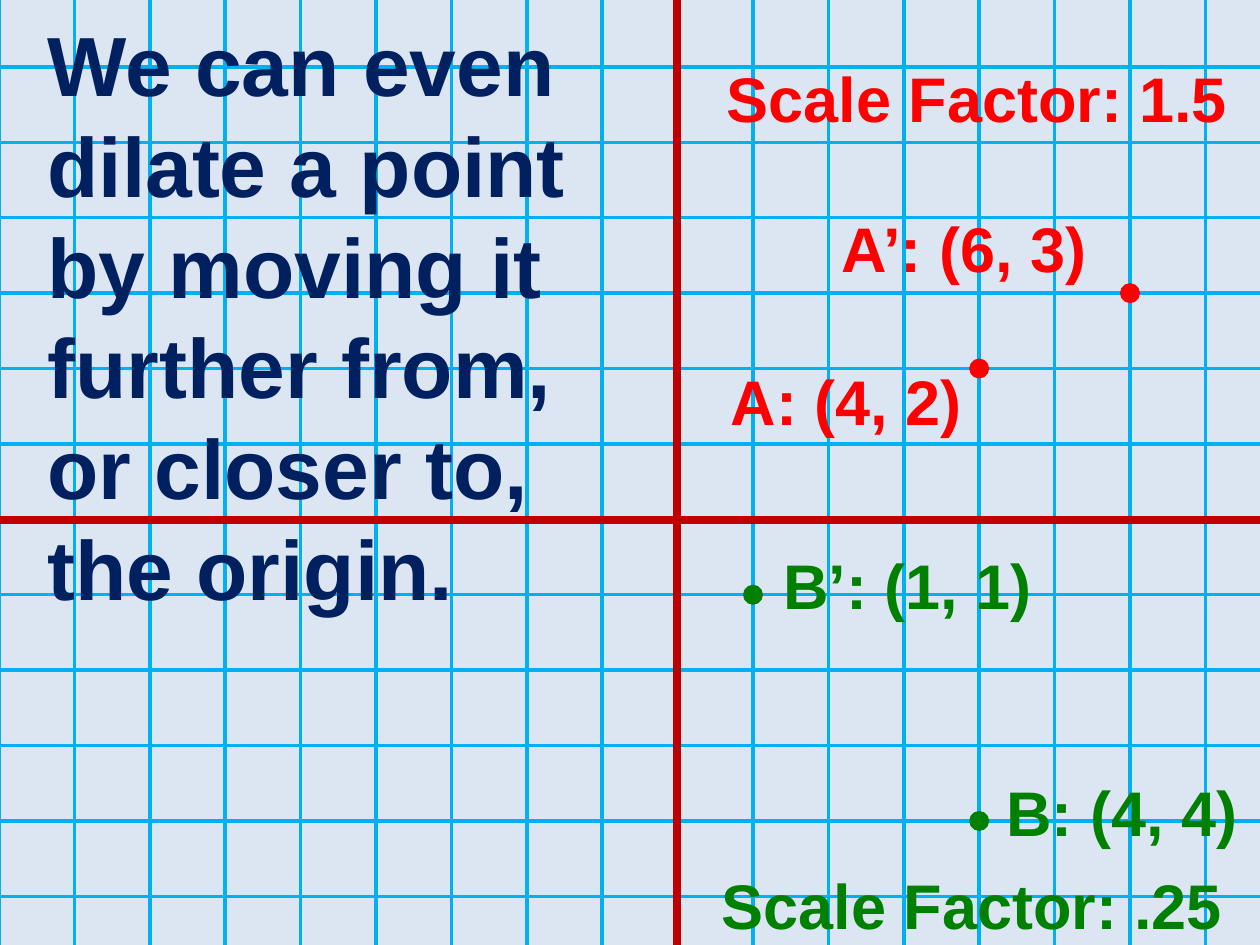
from pptx import Presentation
from pptx.dml.color import RGBColor
from pptx.enum.shapes import MSO_CONNECTOR, MSO_SHAPE
from pptx.oxml.ns import qn
from pptx.util import Cm, Pt

COLOURS = {
    "paper": "DCE6F2",
    "grid": "00B0F0",
    "axis": "C00000",
    "text": "002060",
    "enlarged": "FF0000",
    "reduced": "008000",
}
CELL = 1.52
ORIGIN_X, ORIGIN_Y = 13.66, 10.47


def colour(name):
    return RGBColor.from_string(COLOURS[name])


def write_text(frame, *lines, size=36, ink="text", font="Arial", bold=True):
    for index, line in enumerate(lines):
        para = frame.paragraphs[0] if index == 0 else frame.add_paragraph()
        span = para.add_run()
        span.text = line
        span.font.name = font
        span.font.size = Pt(size)
        span.font.bold = bold
        span.font.color.rgb = colour(ink)


class GraphPaper:
    """Holds the current page and draws in centimetres."""

    def __init__(self, page):
        self.page = page

    def shape(self, kind, left, top, width, height, fill, line):
        shape = self.page.shapes.add_shape(
            kind, Cm(left), Cm(top), Cm(width), Cm(height))
        shape.shadow.inherit = False
        if fill:
            shape.fill.solid()
            shape.fill.fore_color.rgb = colour(fill)
        else:
            shape.fill.background()
        shape.line.color.rgb = colour(line)
        shape.line.width = Pt(2)

    def grid(self):
        """Lay filled columns under unfilled rows, counted from the origin."""
        for column in range(-9, 8):
            self.shape(MSO_SHAPE.RECTANGLE, ORIGIN_X + column * CELL, -0.38,
                       CELL, 20, "paper", "grid")
        for row in range(-7, 6):
            self.shape(MSO_SHAPE.RECTANGLE, -1.7, ORIGIN_Y + row * CELL,
                       28.7, CELL, None, "grid")

    def axis(self, start_x, start_y, end_x, end_y):
        axis = self.page.shapes.add_connector(
            MSO_CONNECTOR.STRAIGHT,
            Cm(start_x), Cm(start_y), Cm(end_x), Cm(end_y))
        axis.line.color.rgb = colour("axis")
        axis.line.width = Pt(4.5)
        properties = axis._element.spPr
        properties.append(properties.makeelement(qn("a:effectLst"), {}))

    def point(self, x, y, ink, size=0.33):
        """Draw a dot centred on grid coordinates."""
        self.shape(MSO_SHAPE.OVAL,
                   ORIGIN_X + x * CELL - size / 2,
                   ORIGIN_Y - y * CELL - size / 2,
                   size, size, ink, ink)

    def text(self, left, top, width, height, *lines, **style):
        box = self.page.shapes.add_textbox(
            Cm(left), Cm(top), Cm(width), Cm(height))
        box.text_frame.word_wrap = True
        write_text(box.text_frame, *lines, **style)


def main():
    deck = Presentation()
    deck.slide_width, deck.slide_height = Cm(25.4), Cm(19.05)
    paper = GraphPaper(deck.slides.add_slide(deck.slide_layouts[6]))

    paper.grid()
    paper.text(0.71, 0.13, 12.9, 12.57,
               "We can even dilate a point by moving it further from,",
               "or closer to, the origin.", size=48)
    paper.axis(-2.1, 10.49, 27.13, 10.49)
    paper.axis(13.64, 19.63, 13.64, -0.13)

    for x, y, ink in ((4, 2, "enlarged"), (6, 3, "enlarged"),
                      (1, -1, "reduced"), (4, -4, "reduced")):
        paper.point(x, y, ink)

    for label, left, top, width, ink in (
            ("Scale Factor: 1.5", 14.4, 1.07, 11.43, "enlarged"),
            ("A: (4, 2)", 14.48, 7.19, 5.41, "enlarged"),
            ("A’: (6, 3)", 16.71, 4.09, 5.94, "enlarged"),
            ("Scale Factor: .25", 14.3, 17.35, 11.43, "reduced"),
            ("B’: (1, 1)", 15.54, 10.9, 5.77, "reduced"),
            ("B: (4, 4)", 20.04, 15.47, 5.77, "reduced")):
        paper.text(left, top, width, 1.8, label, ink=ink)

    deck.save("out.pptx")


if __name__ == "__main__":
    main()
